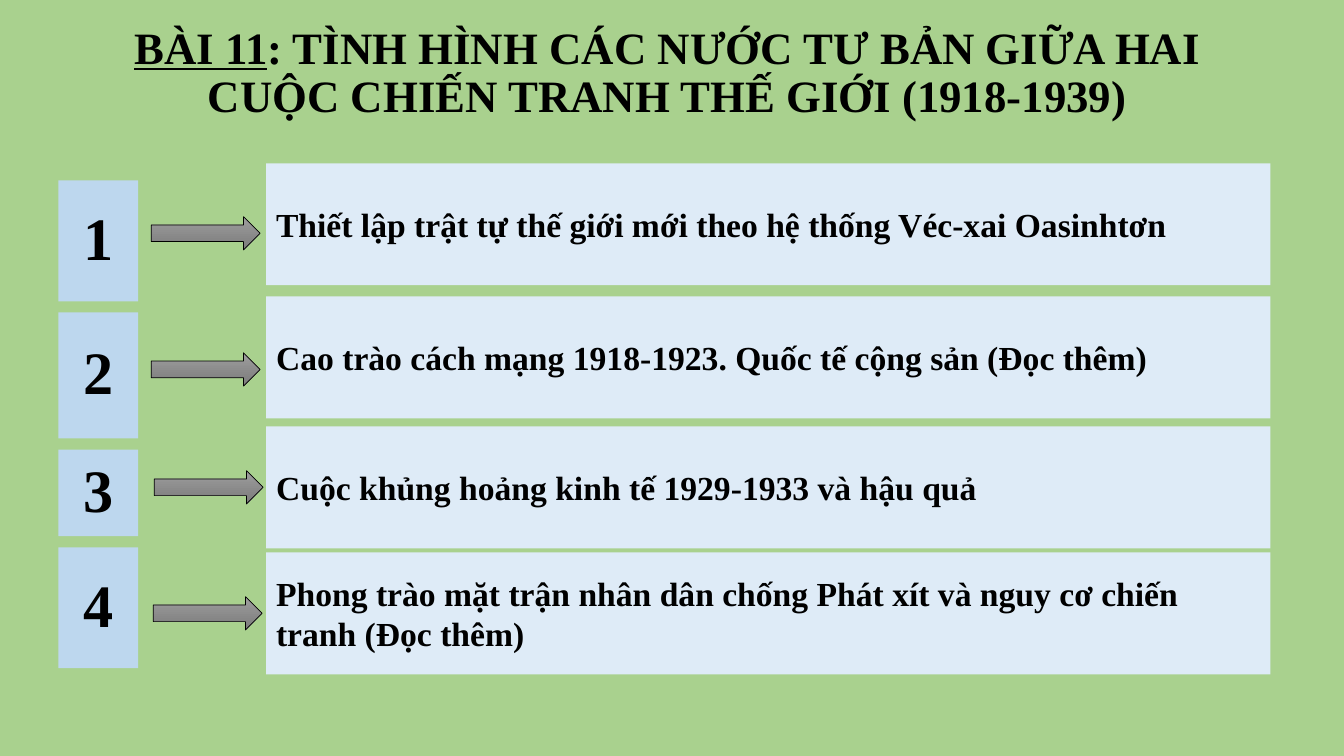
from pptx import Presentation
from pptx.dml.color import RGBColor
from pptx.enum.shapes import MSO_SHAPE
from pptx.enum.text import MSO_ANCHOR, PP_ALIGN
from pptx.util import Inches, Pt

RECTANGLE = MSO_SHAPE.RECTANGLE
RIGHT_ARROW = MSO_SHAPE.RIGHT_ARROW
MIDDLE = MSO_ANCHOR.MIDDLE
LEFT = PP_ALIGN.LEFT
CENTER = PP_ALIGN.CENTER

GREEN = RGBColor(0xA9, 0xD1, 0x8E)
BLUE = RGBColor(0xBD, 0xD7, 0xEE)
PALE_BLUE = RGBColor(0xDE, 0xEB, 0xF7)
LIGHT_GRAY = RGBColor(0x9D, 0x9D, 0x9D)
DARK_GRAY = RGBColor(0x7C, 0x7C, 0x7C)
BLACK = RGBColor(0, 0, 0)

FONT = "Times New Roman"
TITLE = [
    ("BÀI 11", True),
    (": TÌNH HÌNH CÁC NƯỚC TƯ BẢN GIỮA HAI CUỘC CHIẾN TRANH THẾ GIỚI (1918-1939)", False),
]
# topic, topic top, number top, number height, arrow left, arrow top
TOPICS = [
    ("Thiết lập trật tự thế giới mới theo hệ thống Véc-xai Oasinhtơn",
     1.62, 1.79, 1.2, 1.5, 2.15),
    ("Cao trào cách mạng 1918-1923. Quốc tế cộng sản (Đọc thêm)",
     2.94, 3.1, 1.25, 1.5, 3.5),
    ("Cuộc khủng hoảng kinh tế 1929-1933 và hậu quả",
     4.23, 4.46, 0.86, 1.53, 4.67),
    ("Phong trào mặt trận nhân dân chống Phát xít và nguy cơ chiến tranh (Đọc thêm)",
     5.48, 5.43, 1.2, 1.52, 5.92),
]


def write_text(shape, runs, size, align=LEFT, line_spacing=1.0, margin=0.1):
    """Write bold runs, given as (text, underlined) pairs, into a shape."""
    frame = shape.text_frame
    frame.word_wrap = True
    frame.vertical_anchor = MIDDLE
    frame.margin_left = frame.margin_right = Inches(margin)
    paragraph = frame.paragraphs[0]
    paragraph.alignment = align
    paragraph.line_spacing = line_spacing
    for text, underlined in runs:
        run = paragraph.add_run()
        run.text = text
        font = run.font
        font.name = FONT
        font.size = Pt(size)
        font.bold = True
        font.underline = underlined
        font.color.rgb = BLACK


def add_title(slide):
    """Add the lesson title."""
    box = slide.shapes.add_textbox(Inches(0.62), Inches(0.11), Inches(12), Inches(1.25))
    write_text(box, TITLE, 32, align=CENTER, line_spacing=0.9)


def add_panel(slide, left, top, width, height, color, text, size, **text_format):
    """Add a filled rectangle with text."""
    panel = slide.shapes.add_shape(
        RECTANGLE, Inches(left), Inches(top), Inches(width), Inches(height))
    panel.shadow.inherit = False
    panel.fill.solid()
    panel.fill.fore_color.rgb = color
    panel.line.fill.background()
    write_text(panel, [(text, False)], size, **text_format)


def add_arrow(slide, left, top):
    """Add a gray gradient block arrow."""
    arrow = slide.shapes.add_shape(
        RIGHT_ARROW, Inches(left), Inches(top), Inches(1.08), Inches(0.33))
    arrow.shadow.inherit = False
    arrow.fill.gradient()
    arrow.fill.gradient_angle = 270
    for stop, color in zip(arrow.fill.gradient_stops, (LIGHT_GRAY, DARK_GRAY)):
        stop.color.rgb = color
    arrow.line.color.rgb = BLACK
    arrow.line.width = Pt(0.5)


def main():
    """Build the lesson outline slide."""
    presentation = Presentation()
    presentation.slide_width = Inches(13.33)
    presentation.slide_height = Inches(7.5)
    slide = presentation.slides.add_slide(presentation.slide_layouts[6])
    slide.background.fill.solid()
    slide.background.fill.fore_color.rgb = GREEN
    add_title(slide)
    for number, topic_row in enumerate(TOPICS, start=1):
        topic, topic_top, number_top, number_height, arrow_left, arrow_top = topic_row
        add_panel(slide, 0.58, number_top, 0.79, number_height, BLUE, str(number), 43,
                  align=CENTER, line_spacing=0.9, margin=0.12)
        add_arrow(slide, arrow_left, arrow_top)
        add_panel(slide, 2.64, topic_top, 9.96, 1.21, PALE_BLUE, topic, 24)
    presentation.save("out.pptx")


if __name__ == "__main__":
    main()
